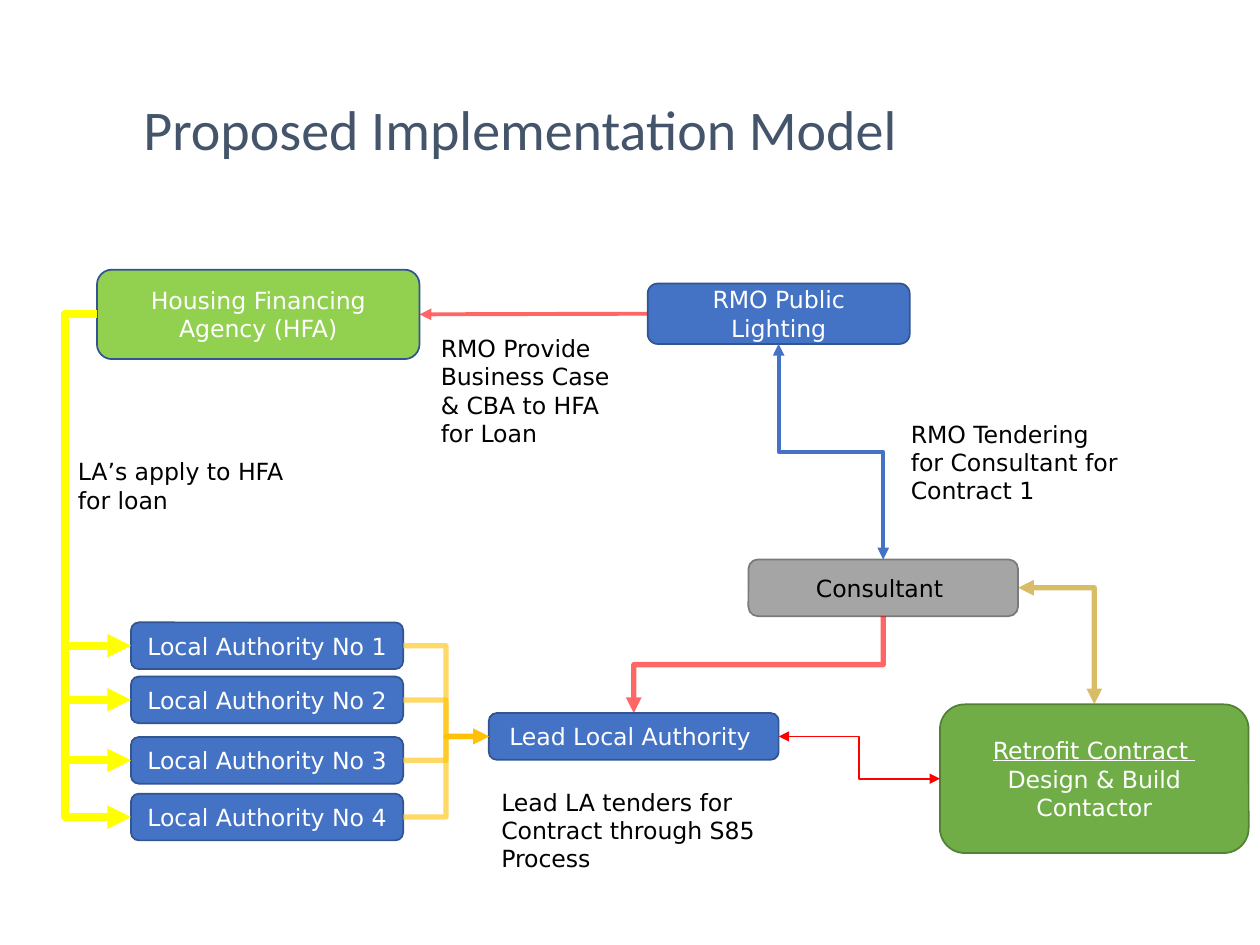
from collections import namedtuple

from lxml.etree import SubElement
from pptx import Presentation
from pptx.dml.color import RGBColor
from pptx.enum.shapes import MSO_CONNECTOR as Connector, MSO_SHAPE as Shape
from pptx.enum.text import MSO_ANCHOR as Anchor, MSO_AUTO_SIZE as AutoSize, PP_ALIGN as Align
from pptx.oxml.ns import qn
from pptx.util import Inches, Pt

COLUMNS, ROWS = 100, 75
WIDTH, HEIGHT = Inches(10), Inches(7.5)
TOP, LEFT, BOTTOM, RIGHT = range(4)
BLUE, NAVY, WHITE, BLACK = "4472C4", "325491", "FFFFFF", "000000"
Box = namedtuple("Box", "left top width height")


def rgb(color):
    """Turn a hex string into a colour."""
    return RGBColor.from_string(color)


def within(area, left, top, width, height):
    """Return slide lengths for a grid box measured from an area's corner."""
    column, row = WIDTH / COLUMNS, HEIGHT / ROWS
    return (round((area.left + left) * column), round((area.top + top) * row),
            round(width * column), round(height * row))


def write(para, words, color, size=13.5, font="DejaVu Sans", underline=False):
    """Add one formatted run to a paragraph."""
    span = para.add_run()
    span.text = words
    span.font.size = Pt(size)
    span.font.name = font
    span.font.underline = underline
    span.font.color.rgb = rgb(color)


def add_party(page, place, lines, fill=BLUE, edge=NAVY, color=WHITE,
              kind=Shape.FLOWCHART_ALTERNATE_PROCESS, underline_first=False):
    """Add a rounded box that names one party."""
    party = page.shapes.add_shape(kind, *place)
    party.shadow.inherit = False
    party.fill.solid()
    party.fill.fore_color.rgb = rgb(fill)
    party.line.color.rgb = rgb(edge)
    party.line.width = Pt(1)
    frame = party.text_frame
    frame.word_wrap = True
    frame.vertical_anchor = Anchor.MIDDLE
    for index, words in enumerate(lines):
        para = frame.add_paragraph() if index else frame.paragraphs[0]
        para.alignment = Align.CENTER
        write(para, words, color, underline=underline_first and index == 0)
    return party


def add_note(page, place, words, color=BLACK, **style):
    """Add a wrapped text box with one paragraph."""
    frame = page.shapes.add_textbox(*place).text_frame
    frame.word_wrap = True
    frame.auto_size = AutoSize.SHAPE_TO_FIT_TEXT
    write(frame.paragraphs[0], words, color, **style)


def turn(link):
    """Make an elbow leave and arrive vertically."""
    start_x, end_x = link.begin_x, link.end_x
    across, down = abs(end_x - start_x), abs(link.end_y - link.begin_y)
    middle_x, middle_y = (start_x + end_x) // 2, (link.begin_y + link.end_y) // 2
    link.left, link.top = middle_x - down // 2, middle_y - across // 2
    link.width, link.height = down, across
    frame = link.element.spPr.find(qn("a:xfrm"))
    rightward = end_x > start_x
    frame.set("rot", str((270 if rightward else 90) * 60000))
    frame.set("flipH", str(int(rightward)))
    frame.set("flipV", "0")


def add_flow(page, start, start_site, end, end_site, color, weight, kind=Connector.ELBOW,
             alpha=None, both=False, bend=None, corner=False):
    """Join two parties with an arrow."""
    link = page.shapes.add_connector(kind, 0, 0, 0, 0)
    link.begin_connect(start, start_site)
    link.end_connect(end, end_site)
    link.line.color.rgb = rgb(color)
    link.line.width = Pt(weight)
    properties = link.element.spPr
    SubElement(properties, qn("a:effectLst"))
    outline = properties.find(qn("a:ln"))
    if alpha:
        SubElement(outline.find(".//" + qn("a:srgbClr")), qn("a:alpha"), val=str(alpha * 1000))
    for tag in ("a:headEnd", "a:tailEnd") if both else ("a:tailEnd",):
        SubElement(outline, qn(tag), type="triangle")
    geometry = properties.find(qn("a:prstGeom"))
    if corner:
        geometry.set("prst", "bentConnector2")
    elif start_site in (TOP, BOTTOM):
        turn(link)
    if bend is not None:
        guides = geometry.find(qn("a:avLst"))
        SubElement(guides, qn("a:gd"), name="adj1", fmla=f"val {round(bend * 100000)}")


def add_title(page, area):
    """Place the slide title."""
    add_note(page, within(area, 0, 0, area.width, area.height),
             "Proposed Implementation Model", "44546A", size=32, font="Calibri")


def add_funding(page, area):
    """Place the funding parties and their notes."""
    agency = add_party(page, within(area, 2.5, 0, 25.6, 7.1),
                       ["Housing Financing Agency (HFA)"], fill="92D050")
    office = add_party(page, within(area, 46.2, 1.1, 20.8, 4.8), ["RMO Public Lighting"])
    add_note(page, within(area, 0, 14.4, 19.3, 5.6), "LA’s apply to HFA for loan")
    add_note(page, within(area, 28.8, 4.6, 16.3, 10.1),
             "RMO Provide Business Case & CBA to HFA for Loan")
    add_note(page, within(area, 66.1, 11.4, 18.5, 7.8),
             "RMO Tendering for Consultant for Contract 1")
    return agency, office


def add_authorities(page, area):
    """Stack the four local authorities."""
    return [add_party(page, within(area, 0, top, area.width, 3.7),
                      [f"Local Authority No {number}"])
            for number, top in enumerate((0, 4.3, 9.1, 13.6), 1)]


def add_delivery(page, area):
    """Place the lead authority, the consultant and the contractor."""
    lead = add_party(page, within(area, 0, 12.2, 23, 3.7), ["Lead Local Authority "])
    consultant = add_party(page, within(area, 20.6, 0, 21.4, 4.5), ["Consultant "],
                           "A5A5A5", "7A7A7A", BLACK, Shape.ROUNDED_RECTANGLE)
    contractor = add_party(page, within(area, 35.8, 11.5, 24.5, 11.8),
                           ["Retrofit Contract ", "Design & Build Contactor"],
                           "70AD47", "538035", underline_first=True)
    add_note(page, within(area, 0, 17.6, 24.2, 7.8),
             "Lead LA tenders for Contract through S85 Process")
    return lead, consultant, contractor


def add_flows(page, agency, office, authorities, lead, consultant, contractor):
    """Draw every arrow between the parties."""
    for authority in authorities:
        add_flow(page, agency, LEFT, authority, LEFT, "FFFF00", 4.5, bend=-0.93)
        add_flow(page, authority, RIGHT, lead, LEFT, "FFC000", 3, alpha=60)
    add_flow(page, consultant, BOTTOM, lead, TOP, "FF0000", 3, alpha=60)
    add_flow(page, consultant, RIGHT, contractor, TOP, "BF9000", 3,
             alpha=60, both=True, corner=True)
    add_flow(page, lead, RIGHT, contractor, LEFT, "FF0000", 1, both=True)
    add_flow(page, office, BOTTOM, consultant, TOP, BLUE, 2.25, both=True)
    add_flow(page, office, LEFT, agency, RIGHT, "FF0000", 2.25, Connector.STRAIGHT, alpha=60)


def main():
    """Build and save the deck."""
    deck = Presentation()
    deck.slide_width, deck.slide_height = WIDTH, HEIGHT
    page = deck.slides.add_slide(deck.slide_layouts[6])
    agency, office = add_funding(page, Box(5.2, 21.4, 85, 20))
    authorities = add_authorities(page, Box(10.4, 49.4, 21.6, 17.3))
    delivery = add_delivery(page, Box(38.8, 44.4, 60.3, 25.4))
    add_flows(page, agency, office, authorities, *delivery)
    add_title(page, Box(10.4, 7, 83.7, 6.4))
    deck.save("out.pptx")


if __name__ == "__main__":
    main()
